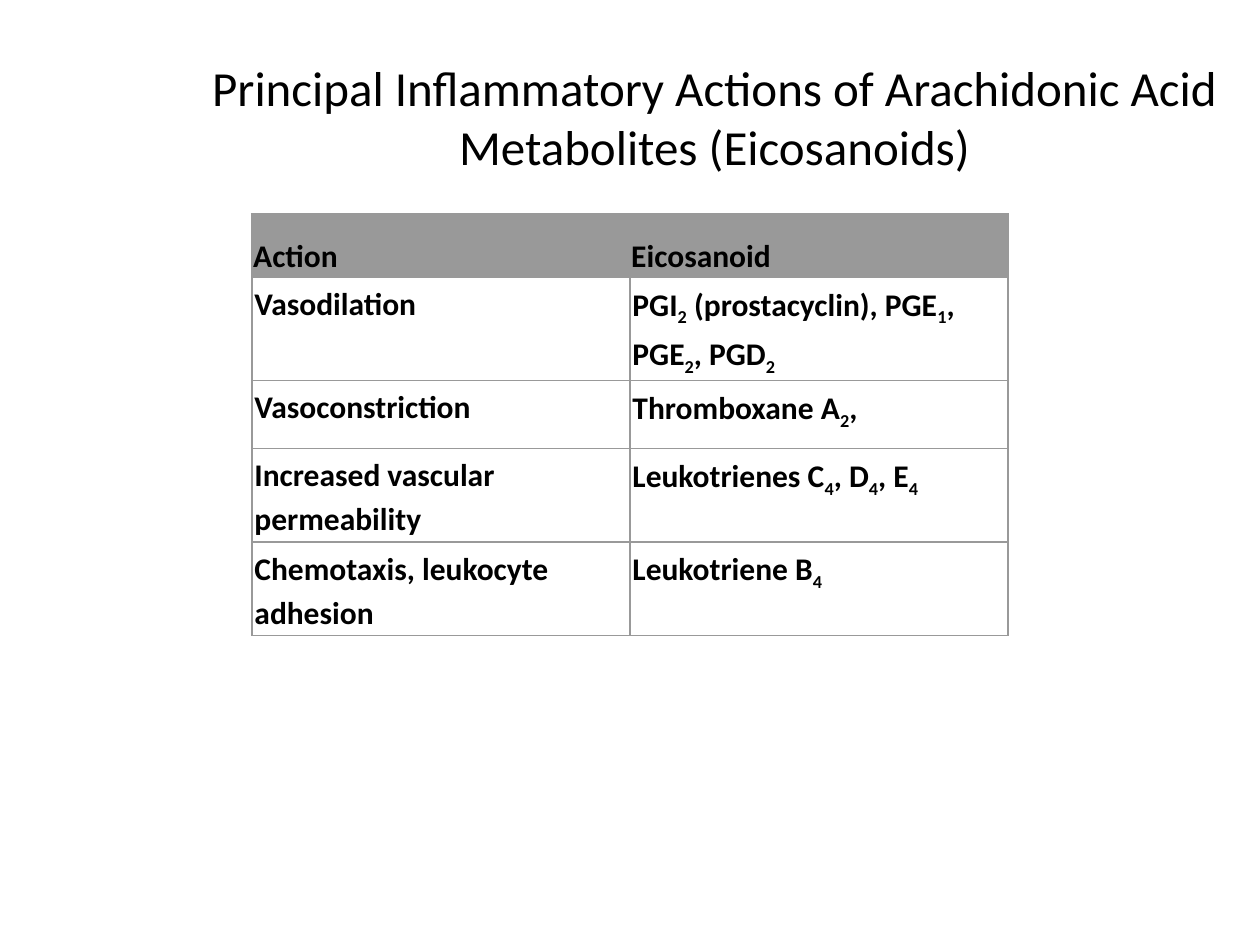
from pptx import Presentation
from pptx.dml.color import RGBColor
from pptx.enum.text import MSO_ANCHOR as Anchor, PP_ALIGN as Align
from pptx.oxml import parse_xml
from pptx.oxml.ns import nsdecls
from pptx.util import Inches, Pt

# Content: an underscore marks the next character as a subscript
TITLE = "Principal Inflammatory Actions of Arachidonic Acid Metabolites (Eicosanoids)"
ROWS = [
    ("Action", "Eicosanoid"),
    ("Vasodilation", "PGI_2 (prostacyclin), PGE_1, PGE_2, PGD_2"),
    ("Vasoconstriction", "Thromboxane A_2,"),
    ("Increased vascular permeability", "Leukotrienes C_4, D_4, E_4"),
    ("Chemotaxis, leukocyte adhesion", "Leukotriene B_4"),
]

# Style
BLACK = RGBColor(0x00, 0x00, 0x00)
WHITE = RGBColor(0xFF, 0xFF, 0xFF)
GRAY = RGBColor(0x99, 0x99, 0x99)
FONT = "Calibri"
HEADER_HEIGHT, ROW_HEIGHT, COLUMN_WIDTH = 0.5, 0.54, 3
TABLE_HEIGHT = HEADER_HEIGHT + ROW_HEIGHT * (len(ROWS) - 1)


def set_attributes(target, **values):
    for name, value in values.items():
        setattr(target, name, value)


def add_span(para, text, size, bold=False, subscript=False):
    span = para.add_run()
    span.text = text
    set_attributes(span.font, name=FONT, size=Pt(size), bold=bold)
    span.font.color.rgb = BLACK
    if subscript:
        span.font._element.set("baseline", "-25000")


def add_formula(para, text):
    first, *rest = text.split("_")
    add_span(para, first, 18, bold=True)
    for part in rest:
        add_span(para, part[0], 18, bold=True, subscript=True)
        if part[1:]:
            add_span(para, part[1:], 18, bold=True)


def set_borders(cell, widths):
    properties = cell._tc.get_or_add_tcPr()
    for index, (side, width) in enumerate(widths.items()):
        properties.insert(index, parse_xml(
            f'<a:ln{side} {nsdecls("a")} w="{Pt(width)}"><a:solidFill>'
            f'<a:srgbClr val="{GRAY}"/></a:solidFill></a:ln{side}>'))


deck = Presentation()
set_attributes(deck, slide_width=Inches(10), slide_height=Inches(7.5))
page = deck.slides.add_slide(deck.slide_layouts[5])

# Title
title = page.shapes.title
set_attributes(title, left=Inches(1.57), top=Inches(0.3),
               width=Inches(8.2), height=Inches(1.25))
set_attributes(title.text_frame, word_wrap=True, vertical_anchor=Anchor.MIDDLE)
para = title.text_frame.paragraphs[0]
para.alignment = Align.CENTER
add_span(para, TITLE, 28)

# Table
table = page.shapes.add_table(
    len(ROWS), 2, Inches(2), Inches(1.7),
    Inches(2 * COLUMN_WIDTH), Inches(TABLE_HEIGHT)).table
set_attributes(table, first_row=False, horz_banding=False)
for column in table.columns:
    column.width = Inches(COLUMN_WIDTH)

for r, row in enumerate(ROWS):
    header = r == 0
    table.rows[r].height = Inches(HEADER_HEIGHT if header else ROW_HEIGHT)
    for c, text in enumerate(row):
        cell = table.cell(r, c)
        inset = Inches(0.01 if header else 0.02)
        set_attributes(cell, margin_left=inset, margin_right=inset,
                       margin_top=inset, margin_bottom=inset,
                       vertical_anchor=Anchor.BOTTOM if header else Anchor.TOP)
        cell.fill.solid()
        cell.fill.fore_color.rgb = GRAY if header else WHITE
        set_borders(cell, {"L": 1.5 if header and c == 0 else 1,
                           "R": 1.5 if header and c == 1 else 1,
                           "T": 1.5 if header else 1, "B": 1})
        para = cell.text_frame.paragraphs[0]
        set_attributes(para, line_spacing=1.15, space_after=Pt(10))
        add_formula(para, text)

deck.save("out.pptx")
